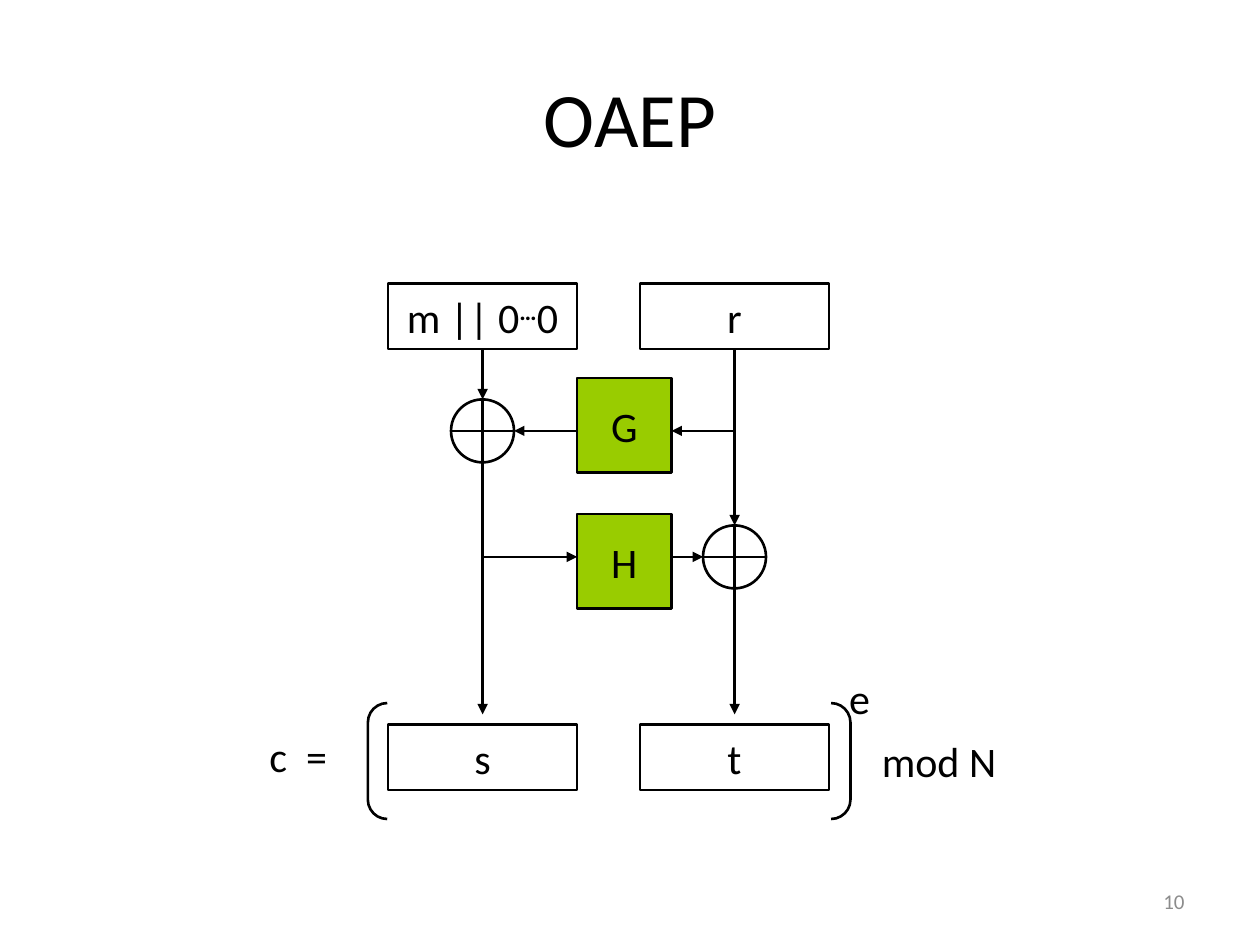
from dataclasses import dataclass

from lxml import etree
from pptx import Presentation
from pptx.dml.color import RGBColor
from pptx.enum.shapes import MSO_CONNECTOR, MSO_SHAPE
from pptx.enum.text import MSO_ANCHOR, MSO_AUTO_SIZE, PP_ALIGN
from pptx.oxml.ns import qn
from pptx.shapes.autoshape import Shape
from pptx.slide import Slide
from pptx.text.text import _Paragraph
from pptx.util import Inches, Pt

RECTANGLE = MSO_SHAPE.RECTANGLE
OVAL = MSO_SHAPE.OVAL
BRACKET_PAIR = MSO_SHAPE.DOUBLE_BRACKET
STRAIGHT = MSO_CONNECTOR.STRAIGHT
MIDDLE = MSO_ANCHOR.MIDDLE
LEFT, CENTER, RIGHT = PP_ALIGN.LEFT, PP_ALIGN.CENTER, PP_ALIGN.RIGHT
FIT_SHAPE = MSO_AUTO_SIZE.SHAPE_TO_FIT_TEXT
TITLE_ONLY = 5
BOTTOM_SIDE = 2


@dataclass(frozen=True)
class Theme:
    font: str = "Calibri"
    ink: RGBColor = RGBColor(0x00, 0x00, 0x00)
    paper: RGBColor = RGBColor(0xFF, 0xFF, 0xFF)
    hash_fill: RGBColor = RGBColor(0x99, 0xCC, 0x00)
    muted: RGBColor = RGBColor(0x8C, 0x8C, 0x8C)
    title_size: int = 44
    body_size: int = 24
    number_size: int = 12
    line_width: float = 1.5


@dataclass(frozen=True)
class Span:
    text: str
    raised: bool = False


@dataclass(frozen=True)
class Box:
    left: float
    top: float
    width: float
    height: float
    spans: tuple[Span, ...]
    fill: RGBColor


@dataclass(frozen=True)
class Label:
    text: str
    left: float
    top: float
    width: float


@dataclass(frozen=True)
class Wire:
    start: tuple[float, float]
    end: tuple[float, float]
    arrow: bool = True
    source: Shape | None = None


THEME = Theme()
LEFT_AXIS, RIGHT_AXIS = 3.83, 5.83
G_ROW, H_ROW = 3.42, 4.42
BOX_WIDTH, BOX_HEIGHT = 1.5, 0.52
INPUT_TOP, OUTPUT_TOP = 2.25, 5.75
HASH_LEFT, HASH_SIZE = 4.58, 0.75
HASH_RIGHT = HASH_LEFT + HASH_SIZE
XOR_RADIUS = 0.25
ARROW_END = 5.67


def style_paragraph(para: _Paragraph, size: int, color: RGBColor, align: PP_ALIGN) -> None:
    para.alignment = align
    para.font.name = THEME.font
    para.font.size = Pt(size)
    para.font.color.rgb = color


def add_outline(slide: Slide, kind: MSO_SHAPE, left: float, top: float,
                width: float, height: float, fill: RGBColor | None) -> Shape:
    shape = slide.shapes.add_shape(kind, Inches(left), Inches(top), Inches(width), Inches(height))
    shape.shadow.inherit = False
    if fill is None:
        shape.fill.background()
    else:
        shape.fill.solid()
        shape.fill.fore_color.rgb = fill
    shape.line.color.rgb = THEME.ink
    shape.line.width = Pt(THEME.line_width)
    return shape


def add_box(slide: Slide, box: Box) -> Shape:
    shape = add_outline(slide, RECTANGLE, box.left, box.top, box.width, box.height, box.fill)
    shape.text_frame.vertical_anchor = MIDDLE
    para = shape.text_frame.paragraphs[0]
    style_paragraph(para, THEME.body_size, THEME.ink, CENTER)
    for span in box.spans:
        run = para.add_run()
        run.text = span.text
        if span.raised:
            run.font.bold = True
            run.font._element.set("baseline", "30000")
    return shape


def add_value(slide: Slide, axis: float, top: float, *spans: Span) -> Shape:
    return add_box(slide, Box(axis - BOX_WIDTH / 2, top, BOX_WIDTH, BOX_HEIGHT, spans, THEME.paper))


def add_hash(slide: Slide, name: str, top: float) -> Shape:
    return add_box(slide, Box(HASH_LEFT, top, HASH_SIZE, HASH_SIZE, (Span(name),), THEME.hash_fill))


def add_wire(slide: Slide, wire: Wire) -> None:
    ends = [Inches(value) for value in (*wire.start, *wire.end)]
    connector = slide.shapes.add_connector(STRAIGHT, *ends)
    if wire.source is not None:
        connector.begin_connect(wire.source, BOTTOM_SIDE)
    connector.line.color.rgb = THEME.ink
    connector.line.width = Pt(THEME.line_width)
    if wire.arrow:
        etree.SubElement(connector.line._get_or_add_ln(), qn("a:tailEnd"), type="triangle")
    etree.SubElement(connector._element.spPr, qn("a:effectLst"))


def add_xor(slide: Slide, x: float, y: float) -> None:
    add_outline(slide, OVAL, x - XOR_RADIUS, y - XOR_RADIUS, 2 * XOR_RADIUS, 2 * XOR_RADIUS, THEME.paper)
    add_wire(slide, Wire((x - XOR_RADIUS, y), (x + XOR_RADIUS, y), arrow=False))
    add_wire(slide, Wire((x, y - XOR_RADIUS), (x, y + XOR_RADIUS), arrow=False))


def add_label(slide: Slide, label: Label) -> None:
    box = slide.shapes.add_textbox(Inches(label.left), Inches(label.top), Inches(label.width), Inches(0.5))
    box.text_frame.word_wrap = False
    box.text_frame.auto_size = FIT_SHAPE
    para = box.text_frame.paragraphs[0]
    para.text = label.text
    style_paragraph(para, THEME.body_size, THEME.ink, LEFT)


def add_title(slide: Slide, text: str) -> None:
    title = slide.shapes.title
    title.left, title.top, title.width, title.height = map(Inches, (0.5, 0.3, 9, 1.25))
    title.text_frame.vertical_anchor = MIDDLE
    title.text_frame.text = text
    style_paragraph(title.text_frame.paragraphs[0], THEME.title_size, THEME.ink, CENTER)


def add_page_number(slide: Slide, number: int) -> None:
    box = slide.shapes.add_textbox(Inches(7.17), Inches(6.95), Inches(2.33), Inches(0.4))
    box.text_frame.word_wrap = True
    box.text_frame.vertical_anchor = MIDDLE
    para = box.text_frame.paragraphs[0]
    para.text = str(number)
    style_paragraph(para, THEME.number_size, THEME.muted, RIGHT)


def main() -> None:
    deck = Presentation()
    deck.slide_width, deck.slide_height = Inches(10), Inches(7.5)
    slide = deck.slides.add_slide(deck.slide_layouts[TITLE_ONLY])
    add_title(slide, "OAEP")
    add_page_number(slide, 10)

    message = add_value(slide, LEFT_AXIS, INPUT_TOP, Span("m || 0"), Span("…", raised=True), Span("0"))
    nonce = add_value(slide, RIGHT_AXIS, INPUT_TOP, Span("r"))
    add_value(slide, LEFT_AXIS, OUTPUT_TOP, Span("s"))
    add_value(slide, RIGHT_AXIS, OUTPUT_TOP, Span("t"))
    add_hash(slide, "G", 3)
    add_hash(slide, "H", 4.08)
    add_xor(slide, LEFT_AXIS, G_ROW)
    add_xor(slide, RIGHT_AXIS, H_ROW)

    input_bottom = INPUT_TOP + BOX_HEIGHT
    for wire in (
        Wire((LEFT_AXIS, input_bottom), (LEFT_AXIS, G_ROW - XOR_RADIUS), source=message),
        Wire((RIGHT_AXIS, input_bottom), (RIGHT_AXIS, G_ROW), arrow=False, source=nonce),
        Wire((RIGHT_AXIS, G_ROW), (HASH_RIGHT, G_ROW)),
        Wire((HASH_LEFT, G_ROW), (LEFT_AXIS + XOR_RADIUS, G_ROW)),
        Wire((RIGHT_AXIS, G_ROW), (RIGHT_AXIS, H_ROW - XOR_RADIUS)),
        Wire((LEFT_AXIS, G_ROW + XOR_RADIUS), (LEFT_AXIS, H_ROW), arrow=False),
        Wire((LEFT_AXIS, H_ROW), (HASH_LEFT, H_ROW)),
        Wire((HASH_RIGHT, H_ROW), (RIGHT_AXIS - XOR_RADIUS, H_ROW)),
        Wire((LEFT_AXIS, H_ROW), (LEFT_AXIS, ARROW_END)),
        Wire((RIGHT_AXIS, H_ROW + XOR_RADIUS), (RIGHT_AXIS, ARROW_END)),
    ):
        add_wire(slide, wire)

    add_outline(slide, BRACKET_PAIR, 2.92, 5.58, 3.83, 0.92, None)
    for label in (Label("e", 6.64, 5.29, 0.37), Label("mod N", 6.9, 5.79, 1.12), Label("c  =", 2.04, 5.75, 0.74)):
        add_label(slide, label)
    deck.save("out.pptx")


if __name__ == "__main__":
    main()
